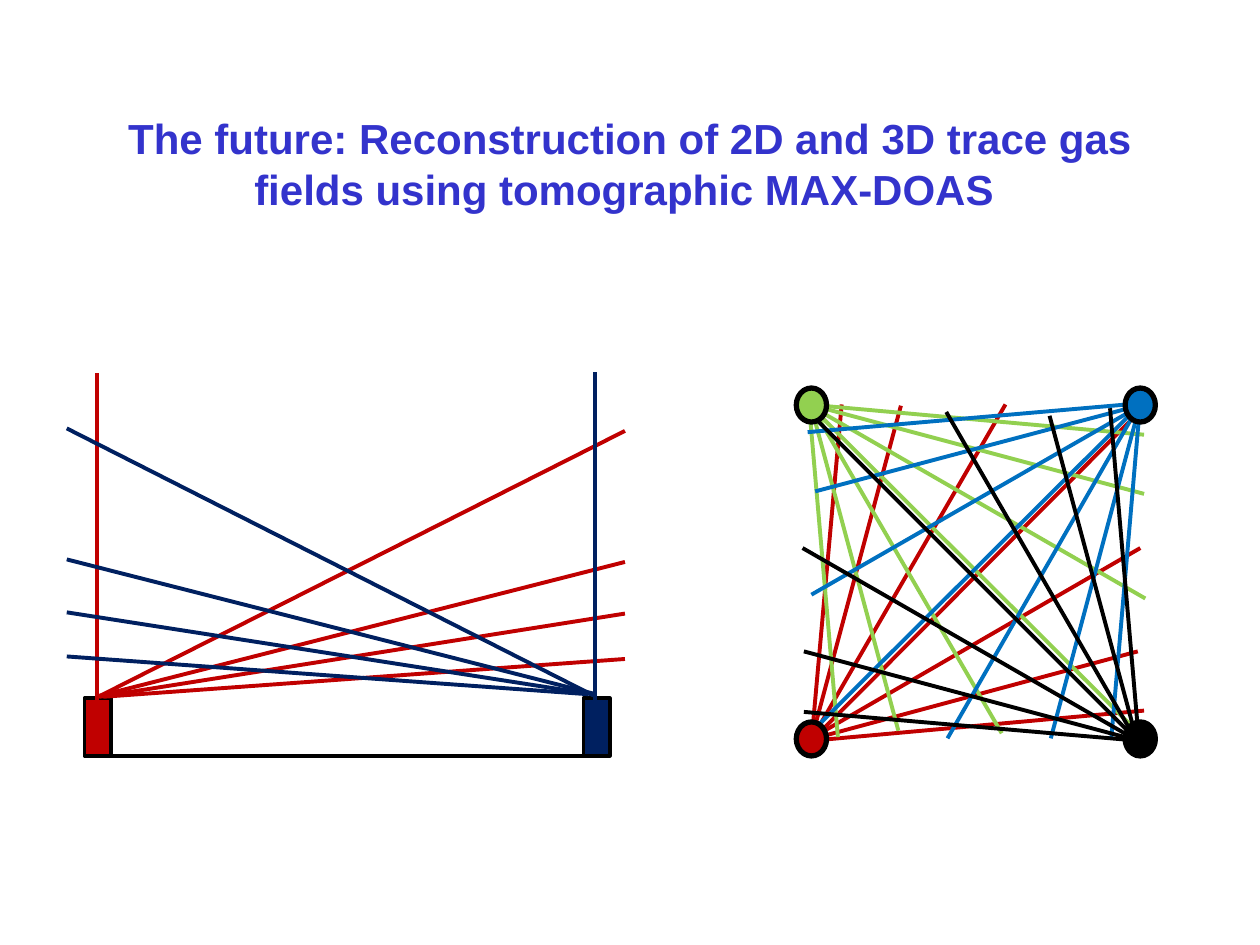
from pptx import Presentation
from pptx.dml.color import RGBColor
from pptx.enum import shapes, text
from pptx.oxml.ns import qn
from pptx.util import Inches, Pt
from lxml import etree

COLORS = {"title": "3333CC", "red": "C00000", "navy": "002060",
          "green": "92D050", "blue": "0070C0", "black": "000000"}


def add_ray(parent, color, x1, y1, x2, y2):
    line = parent.add_connector(shapes.MSO_CONNECTOR.STRAIGHT,
                                Inches(x1), Inches(y1), Inches(x2), Inches(y2))
    line.line.color.rgb = RGBColor.from_string(COLORS[color])
    line.line.width = Pt(2.25)
    etree.SubElement(line._element.spPr, qn("a:effectLst"))


def add_instrument(kind, color, x, y, w, h, outline):
    sp = s.shapes.add_shape(kind, Inches(x), Inches(y), Inches(w), Inches(h))
    sp.shadow.inherit = False
    sp.fill.solid()
    sp.fill.fore_color.rgb = RGBColor.from_string(COLORS[color])
    sp.line.color.rgb = RGBColor.from_string(COLORS["black"])
    sp.line.width = Pt(outline)


prs = Presentation()
prs.slide_width, prs.slide_height = Inches(10), Inches(7.5)
s = prs.slides.add_slide(prs.slide_layouts[5])

# Title
title = s.shapes.title
title.left, title.top = Inches(0.75), Inches(0.67)
title.width, title.height = Inches(8.5), Inches(1.25)
tf = title.text_frame
tf.word_wrap = True
tf.auto_size = text.MSO_AUTO_SIZE.NONE
tf.vertical_anchor = text.MSO_ANCHOR.MIDDLE
p = tf.paragraphs[0]
p.alignment = text.PP_ALIGN.CENTER
r = p.add_run()
r.text = ("The future: Reconstruction of 2D and 3D trace gas fields "
          "using tomographic MAX-DOAS ")
for name, value in {"name": "Arial", "size": Pt(24), "bold": True}.items():
    setattr(r.font, name, value)
r.font.color.rgb = RGBColor.from_string(COLORS["title"])

# Side view: ground and two instruments
add_ray(s.shapes, "black", 0.67, 6, 4.84, 6)
for color, x in (("red", 0.67), ("navy", 4.63)):
    add_instrument(shapes.MSO_SHAPE.RECTANGLE, color, x, 5.54, 0.21, 0.46, 2)

# Each fan of viewing directions: from x, y to x, y
fans = [
    # side view
    ("red", [(0.77, 5.59, 0.77, 2.96), (0.78, 5.53, 4.96, 3.42),
             (0.76, 5.53, 4.96, 4.46), (0.82, 5.53, 4.96, 5.23),
             (0.79, 5.53, 4.96, 4.87)]),
    ("navy", [(4.72, 5.57, 4.72, 2.95), (4.71, 5.52, 0.53, 3.4),
              (4.73, 5.51, 0.53, 4.44), (4.67, 5.51, 0.53, 5.21),
              (4.7, 5.51, 0.53, 4.86)]),
    # top view
    ("red", [(6.44, 5.89, 6.68, 3.21), (6.44, 5.87, 7.15, 3.22),
             (6.44, 5.87, 7.98, 3.21), (6.44, 5.88, 9.05, 3.26),
             (6.44, 5.86, 9.05, 4.35), (6.39, 5.88, 9.03, 5.17),
             (6.43, 5.88, 9.08, 5.64)]),
    ("green", [(6.41, 3.21, 9.08, 3.45), (6.42, 3.21, 9.08, 3.92),
               (6.43, 3.22, 9.09, 4.75), (6.42, 3.21, 9.04, 5.82),
               (6.44, 3.22, 7.95, 5.82), (6.42, 3.16, 7.13, 5.8),
               (6.42, 3.2, 6.65, 5.85)]),
    ("blue", [(9.05, 3.19, 8.82, 5.86), (9.05, 3.2, 8.34, 5.86),
              (9.05, 3.2, 7.52, 5.86), (9.06, 3.2, 6.44, 5.81),
              (9.05, 3.22, 6.44, 4.72), (9.11, 3.2, 6.47, 3.9),
              (9.06, 3.2, 6.41, 3.43)]),
    ("black", [(9.05, 5.88, 6.38, 5.65), (9.04, 5.88, 6.38, 5.17),
               (9.03, 5.88, 6.37, 4.35), (9.04, 5.89, 6.42, 3.27),
               (9.02, 5.88, 7.51, 3.27), (9.04, 5.94, 8.33, 3.3),
               (9.04, 5.89, 8.81, 3.24)]),
]
for color, rays in fans:
    fan = s.shapes.add_group_shape()
    for ray in rays:
        add_ray(fan.shapes, color, *ray)

# Top view: one instrument at each corner
left, right, top, bottom = 6.32, 8.93, 3.08, 5.73
for color, x, y in (("red", left, bottom), ("green", left, top),
                    ("blue", right, top), ("black", right, bottom)):
    add_instrument(shapes.MSO_SHAPE.OVAL, color, x, y, 0.24, 0.27, 3)

prs.save("out.pptx")
